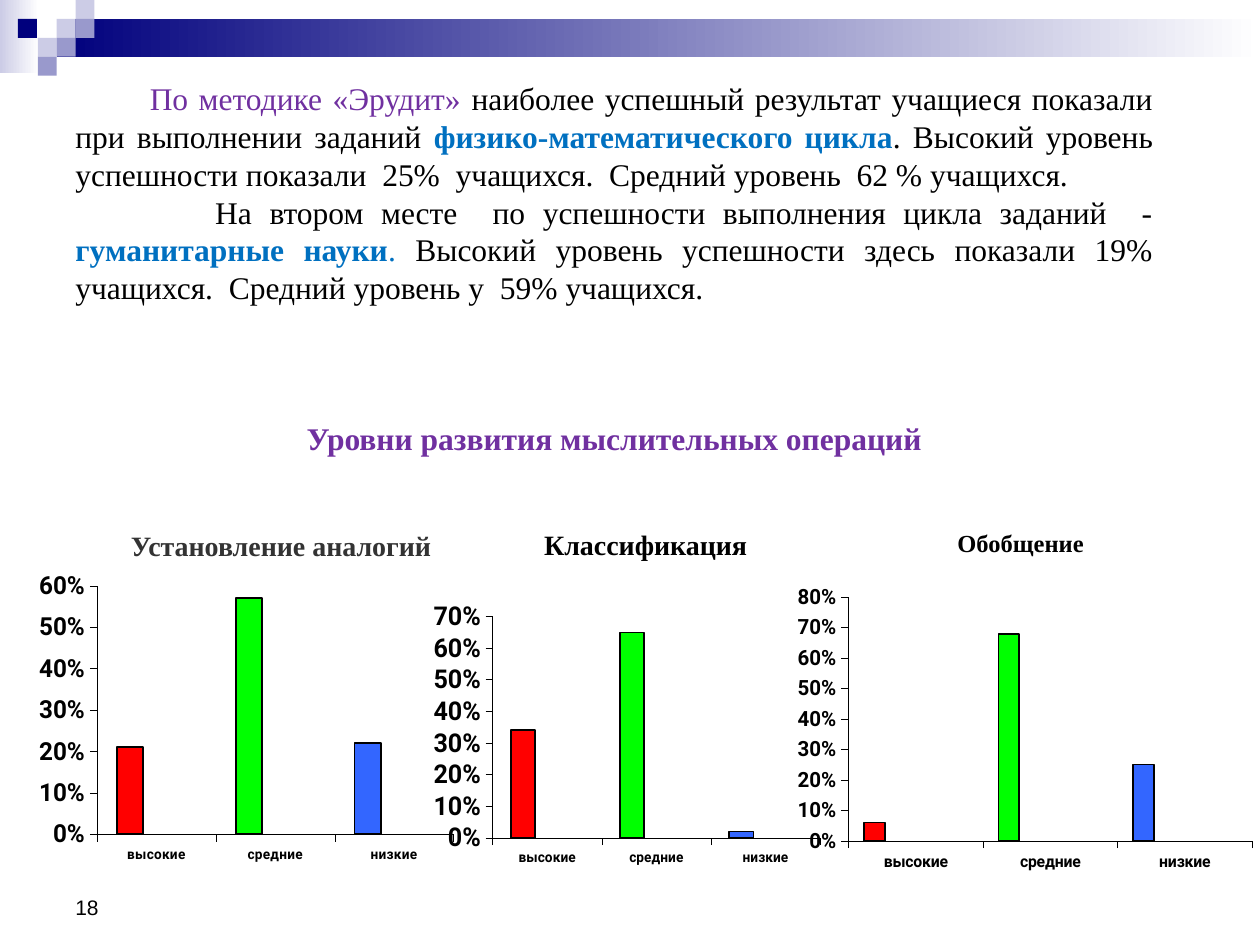
from lxml import etree
from pptx import Presentation
from pptx.chart.data import CategoryChartData
from pptx.dml.color import RGBColor
from pptx.enum import chart as ce, shapes, text
from pptx.oxml import ns
from pptx.util import Inches, Pt

BLACK = RGBColor(0x00, 0x00, 0x00)
WHITE = RGBColor(0xFF, 0xFF, 0xFF)
GRAY = RGBColor(0x33, 0x33, 0x33)
NAVY = RGBColor(0x00, 0x00, 0x7D)
LAVENDER = RGBColor(0xCC, 0xCC, 0xE6)
LILAC = RGBColor(0x99, 0x99, 0xCC)
PURPLE = RGBColor(0x70, 0x30, 0xA0)
BLUE = RGBColor(0x00, 0x70, 0xC0)
BAR_COLORS = [RGBColor(0xFF, 0x00, 0x00), RGBColor(0x00, 0xFF, 0x00), RGBColor(0x33, 0x66, 0xFF)]
EMPTY_COLORS = [RGBColor(0x99, 0x33, 0x66), RGBColor(0xFF, 0xFF, 0xCC),
                RGBColor(0x66, 0x00, 0x66), RGBColor(0xFF, 0x80, 0x80)]

SERIF = "Times New Roman"
LEFT, CENTER, JUSTIFY = text.PP_ALIGN.LEFT, text.PP_ALIGN.CENTER, text.PP_ALIGN.JUSTIFY
TOP, MIDDLE, BOTTOM = text.MSO_ANCHOR.TOP, text.MSO_ANCHOR.MIDDLE, text.MSO_ANCHOR.BOTTOM

GRADIENT_BARS = [((0, 0, 0.31, 0.58), LAVENDER), ((0.45, 0.15, 9.55, 0.3), NAVY)]
SQUARE = 0.15
SQUARES = [(3, 1, LAVENDER), (4, 0, LAVENDER), (4, 1, LILAC), (2, 2, LAVENDER),
           (0.95, 1, NAVY), (3, 2, LILAC), (2, 3, LILAC)]

BODY = [
    {"align": JUSTIFY, "indent": 0.59, "before": 0, "runs": [
        ("По методике «Эрудит» ", PURPLE, False),
        ("наиболее успешный результат учащиеся показали при выполнении заданий ", BLACK, False),
        ("физико-математического цикла", BLUE, True),
        (". Высокий уровень успешности показали  25%  учащихся.  Средний уровень  62 % учащихся.",
         BLACK, False)]},
    {"align": JUSTIFY, "indent": 1.11, "before": 0, "runs": [
        ("На втором месте  по успешности выполнения цикла заданий  - ", BLACK, False),
        ("гуманитарные науки", BLUE, True),
        (".", BLUE, False),
        (" Высокий уровень успешности здесь показали 19% учащихся.  Средний уровень у  59% учащихся.",
         BLACK, False)]},
    {"align": CENTER, "indent": 0, "before": 64.5, "runs": [
        ("Уровни развития мыслительных операций", PURPLE, True)]},
]

CATEGORIES = ["высокие", "средние", "низкие"]
CHARTS = [
    {"box": (0.31, 4.53, 3.36, 2.34), "values": [0.21, 0.57, 0.22], "maximum": 0.6,
     "value_size": 14.2, "category_size": 8, "empty": 2, "plot": (0.117, 0.051, 0.862, 0.843),
     "title": "Установление аналогий", "title_box": (0.94, 4.14, 3.12, 0.37),
     "title_format": {"size": 16, "color": GRAY, "anchor": MIDDLE}},
    {"box": (3.44, 4.77, 3.13, 2.11), "values": [0.34, 0.65, 0.02], "maximum": 0.7,
     "value_size": 15, "category_size": 8.2, "empty": 2, "plot": (0.111, 0.054, 0.869, 0.845),
     "title": "Классификация", "title_box": (4.22, 4.14, 1.84, 0.37),
     "title_format": {"size": 16, "wrap": False}},
    {"box": (6.33, 4.61, 3.67, 2.34), "values": [0.06, 0.68, 0.25], "maximum": 0.8,
     "value_size": 12, "category_size": 9.2, "empty": 4, "plot": (0.092, 0.056, 0.891, 0.826),
     "title": "Обобщение", "title_box": (7.5, 4.14, 1.8, 0.34),
     "title_format": {"size": 14, "anchor": MIDDLE}},
]


def inches(box):
    return [Inches(length) for length in box]


def set_font(font, size, name, color=BLACK, bold=False):
    font.size, font.name, font.bold = Pt(size), name, bold
    font.color.rgb = color


def add_text(slide, box, content, size=18, font=SERIF, color=BLACK, bold=False,
             anchor=TOP, wrap=True, grow=True):
    if isinstance(content, str):
        content = [{"align": LEFT, "indent": 0, "before": 0, "runs": [(content, color, bold)]}]
    frame = slide.shapes.add_textbox(*inches(box)).text_frame
    frame.word_wrap = wrap
    frame.vertical_anchor = anchor
    frame.auto_size = text.MSO_AUTO_SIZE.SHAPE_TO_FIT_TEXT if grow else text.MSO_AUTO_SIZE.NONE
    for index, item in enumerate(content):
        paragraph = frame.add_paragraph() if index else frame.paragraphs[0]
        paragraph.alignment = item["align"]
        paragraph.space_before = Pt(item["before"])
        if item["indent"]:
            paragraph._p.get_or_add_pPr().set("indent", str(Inches(item["indent"])))
        for words, run_color, run_bold in item["runs"]:
            run = paragraph.add_run()
            run.text = words
            set_font(run.font, size, font, run_color, run_bold)


def add_block(slide, box, color, fade=False):
    shape = slide.shapes.add_shape(shapes.MSO_SHAPE.RECTANGLE, *inches(box))
    shape.shadow.inherit = False
    shape.line.fill.background()
    if fade:
        shape.fill.gradient()
        shape.fill.gradient_angle = 0
        for stop, stop_color in zip(shape.fill.gradient_stops, (color, WHITE)):
            stop.color.rgb = stop_color
    else:
        shape.fill.solid()
        shape.fill.fore_color.rgb = color


def paint(format, color):
    format.fill.solid()
    format.fill.fore_color.rgb = color
    format.line.color.rgb = BLACK
    format.line.width = Pt(1)


def set_plot_area(chart, plot):
    area = chart._chartSpace.find(".//" + ns.qn("c:plotArea"))
    for old in area.findall(ns.qn("c:layout")):
        area.remove(old)
    layout = etree.Element(ns.qn("c:layout"))
    area.insert(0, layout)
    manual = etree.SubElement(layout, ns.qn("c:manualLayout"))
    settings = [("layoutTarget", "inner"), ("xMode", "edge"), ("yMode", "edge")]
    for tag, value in settings + list(zip("xywh", plot)):
        etree.SubElement(manual, ns.qn("c:" + tag)).set("val", str(value))


def add_bar_chart(slide, item):
    data = CategoryChartData(number_format="0%")
    data.categories = CATEGORIES
    data.add_series("Series 1", item["values"])
    for number in range(item["empty"]):
        data.add_series(f"Series {number + 2}", [None] * len(CATEGORIES))
    chart = slide.shapes.add_chart(
        ce.XL_CHART_TYPE.COLUMN_CLUSTERED, *inches(item["box"]), data).chart
    chart.has_legend = chart.has_title = False
    set_font(chart.font, item["value_size"], "Roboto", bold=True)
    plot = chart.plots[0]
    plot.vary_by_categories = False
    plot.gap_width, plot.overlap = 150, 0
    main, *empty = plot.series
    paint(main.format, BAR_COLORS[0])
    for index, color in enumerate(BAR_COLORS):
        paint(main.points[index].format, color)
    for series, color in zip(empty, EMPTY_COLORS):
        paint(series.format, color)
    axes = [(chart.category_axis, item["category_size"]), (chart.value_axis, item["value_size"])]
    for axis, size in axes:
        set_font(axis.tick_labels.font, size, "Roboto", bold=True)
        axis.major_tick_mark = ce.XL_TICK_MARK.OUTSIDE
        axis.minor_tick_mark = ce.XL_TICK_MARK.NONE
        axis.format.line.color.rgb = BLACK
        axis.format.line.width = Pt(0.25)
    chart.category_axis.tick_label_position = ce.XL_TICK_LABEL_POSITION.LOW
    value_axis = chart.value_axis
    value_axis.minimum_scale, value_axis.maximum_scale = 0, item["maximum"]
    value_axis.major_unit = 0.1
    value_axis.tick_labels.number_format = "0%"
    value_axis.tick_labels.number_format_is_linked = False
    value_axis.has_major_gridlines = True
    value_axis.major_gridlines.format.line.color.rgb = WHITE
    value_axis.major_gridlines.format.line.width = Pt(1)
    set_plot_area(chart, item["plot"])


def main():
    presentation = Presentation()
    presentation.slide_width, presentation.slide_height = Inches(10), Inches(7.5)
    slide = presentation.slides.add_slide(presentation.slide_layouts[6])
    for box, color in GRADIENT_BARS:
        add_block(slide, box, color, fade=True)
    for column, row, color in SQUARES:
        add_block(slide, (column * SQUARE, row * SQUARE, SQUARE, SQUARE), color)
    for item in CHARTS:
        add_bar_chart(slide, item)
        add_text(slide, item["title_box"], item["title"], bold=True, **item["title_format"])
    add_text(slide, (0.5, 6.83, 2.33, 0.52), "18", size=12, font="Arial", anchor=BOTTOM, grow=False)
    add_text(slide, (0.5, 0.58, 8.75, 3.13), BODY)
    presentation.save("out.pptx")


if __name__ == "__main__":
    main()
